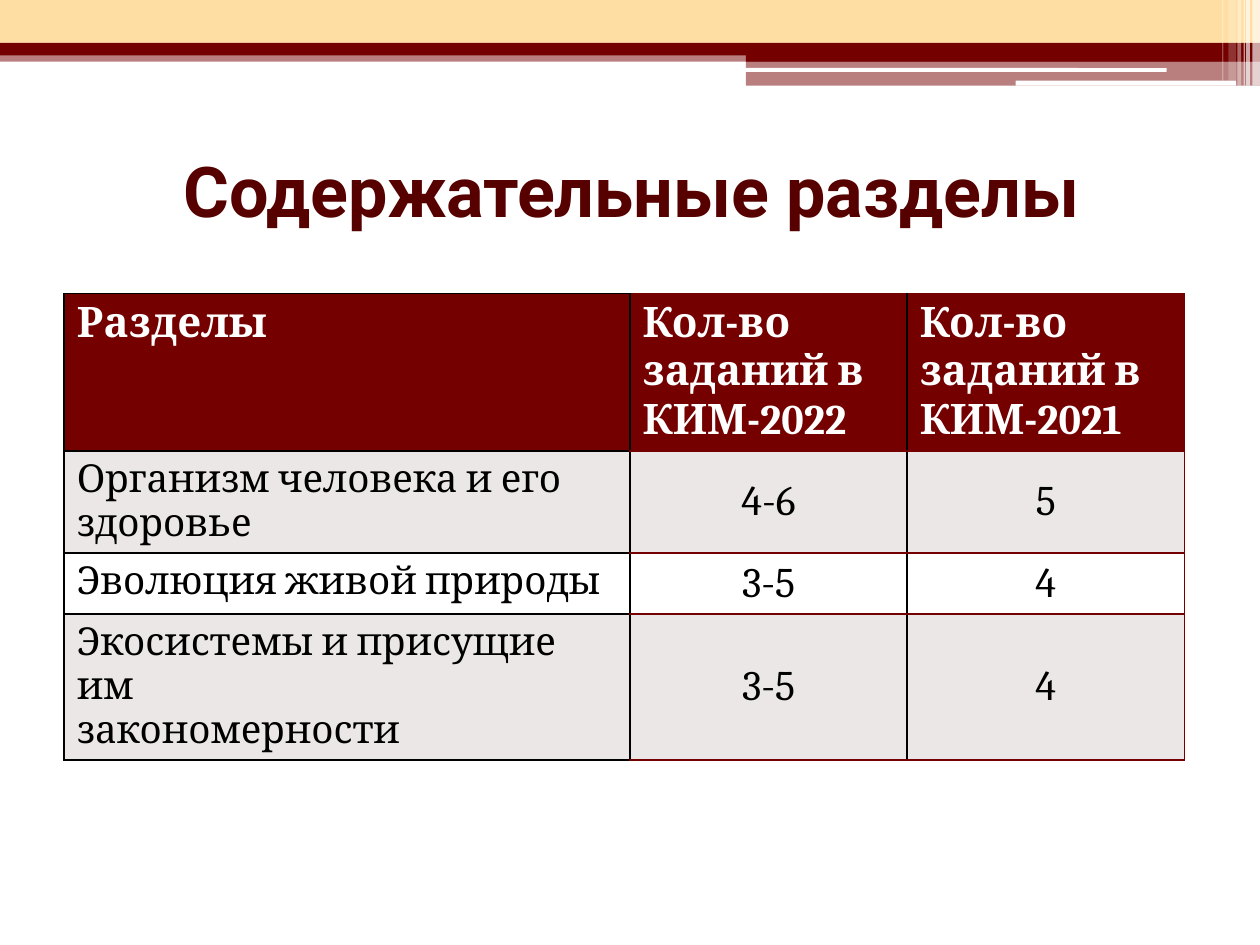
from lxml.etree import SubElement
from pptx import Presentation
from pptx.dml.color import RGBColor
from pptx.enum.shapes import MSO_SHAPE
from pptx.enum.text import MSO_ANCHOR, PP_ALIGN
from pptx.oxml.ns import qn
from pptx.util import Inches, Pt

DARK, SAND, WHITE, BLACK, GREY = "740000", "FFDEA4", "FFFFFF", "000000", "EBE7E7"
BARS = [
    (0, 0.4, 10, 0.09, DARK, 50),
    (0, 0, 10, 0.34, SAND, 100),
    (0, 0.34, 10, 0.1, DARK, 100),
    (5.92, 0.39, 4.08, 0.1, DARK, 100),
    (5.92, 0.48, 4.08, 0.2, DARK, 50),
]
LINES = [(5.91, 0.54, 3.35, 0.03), (8.06, 0.64, 1.75, 0.04)]
STRIPES = [
    (9.94, 0.06, 0.68, 65),
    (9.89, 0.03, 0.68, 65),
    (9.87, 0.01, 0.68, 60),
    (9.82, 0.03, 0.68, 40),
    (9.75, 0.06, 0.64, 20),
    (9.7, 0.01, 0.64, 30),
]
COLS = [4.49, 2.2, 2.2]
ROWS = [1.25, 0.81, 0.48, 1.15]
CELLS = [
    (["Разделы"], ["Кол-во", "заданий в КИМ-2022"], ["Кол-во заданий в КИМ-2021"]),
    (["Организм человека и его здоровье"], ["4-6"], ["5"]),
    (["Эволюция живой природы"], ["3-5"], ["4"]),
    (["Экосистемы и присущие им", "закономерности"], ["3-5"], ["4"]),
]


def paint(fill, color, alpha=100):
    """Give a fill a solid colour with an opacity in percent."""
    fill.solid()
    fill.fore_color.rgb = RGBColor.from_string(color)
    if alpha < 100:
        node = fill._xPr.find(qn("a:solidFill"))[0]
        SubElement(node, qn("a:alpha"), val=str(alpha * 1000))


def write(para, text, font, size, color, bold):
    """Add one formatted run to a paragraph."""
    run = para.add_run()
    run.text = text
    run.font.name, run.font.size, run.font.bold = font, Pt(size), bold
    run.font.color.rgb = RGBColor.from_string(color)


def bar(slide, box, color, alpha=100, kind=MSO_SHAPE.RECTANGLE):
    """Draw one plain bar without outline."""
    shape = slide.shapes.add_shape(kind, *map(Inches, box))
    shape.shadow.inherit = False
    shape.line.fill.background()
    paint(shape.fill, color, alpha)


def banner(slide, left, top):
    """Draw the layered bars along the top edge."""
    for x, y, wide, high, color, alpha in BARS:
        bar(slide, (left + x, top + y, wide, high), color, alpha)
    for x, y, wide, high in LINES:
        box = (left + x, top + y, wide, high)
        bar(slide, box, WHITE, kind=MSO_SHAPE.ROUNDED_RECTANGLE)
    for x, wide, high, alpha in STRIPES:
        bar(slide, (left + x, top, wide, high), WHITE, alpha)


def heading(slide, box, text):
    """Place and format the title."""
    title = slide.shapes.title
    title.left, title.top, title.width, title.height = map(Inches, box)
    frame = title.text_frame
    frame.word_wrap = True
    frame.vertical_anchor = MSO_ANCHOR.MIDDLE
    para = frame.paragraphs[0]
    para.alignment = PP_ALIGN.CENTER
    write(para, text, "Roboto", 40, "570000", True)


def border(cell, col):
    """Draw the four edges of a cell by its column."""
    side = BLACK if col == 0 else DARK
    right = DARK if col == len(COLS) - 1 else BLACK
    props = cell._tc.get_or_add_tcPr()
    for tag, color in zip(("lnL", "lnR", "lnT", "lnB"), (BLACK, right, side, side)):
        line = SubElement(props, qn("a:" + tag), w=str(Pt(1)))
        SubElement(SubElement(line, qn("a:solidFill")), qn("a:srgbClr"), val=color)


def fill_cell(cell, row, col, texts):
    """Fill a table cell with its text, colour and edges."""
    head, value = row == 0, row > 0 and col > 0
    border(cell, col)
    paint(cell.fill, DARK if head else GREY if row % 2 else WHITE)
    cell.vertical_anchor = MSO_ANCHOR.MIDDLE if value else MSO_ANCHOR.TOP
    frame = cell.text_frame
    for i, text in enumerate(texts):
        para = frame.add_paragraph() if i else frame.paragraphs[0]
        para.alignment = PP_ALIGN.CENTER if value else PP_ALIGN.LEFT
        size = 24 if head or value else 22
        write(para, text, "Cambria", size, WHITE if head else BLACK, head)


def grid(slide, left, top):
    """Build the table of sections and task counts."""
    box = (left, top, sum(COLS), sum(ROWS))
    table = slide.shapes.add_table(len(ROWS), len(COLS), *map(Inches, box)).table
    for col, wide in enumerate(COLS):
        table.columns[col].width = Inches(wide)
    for row, high in enumerate(ROWS):
        table.rows[row].height = Inches(high)
        for col, texts in enumerate(CELLS[row]):
            fill_cell(table.cell(row, col), row, col, texts)


def main():
    """Build and save the slide."""
    deck = Presentation()
    deck.slide_width, deck.slide_height = Inches(10), Inches(7.5)
    slide = deck.slides.add_slide(deck.slide_layouts[5])
    banner(slide, 0, 0)
    heading(slide, (0.51, 0.92, 9, 1.17), "Содержательные разделы")
    grid(slide, 0.51, 2.33)
    deck.save("out.pptx")


if __name__ == "__main__":
    main()
